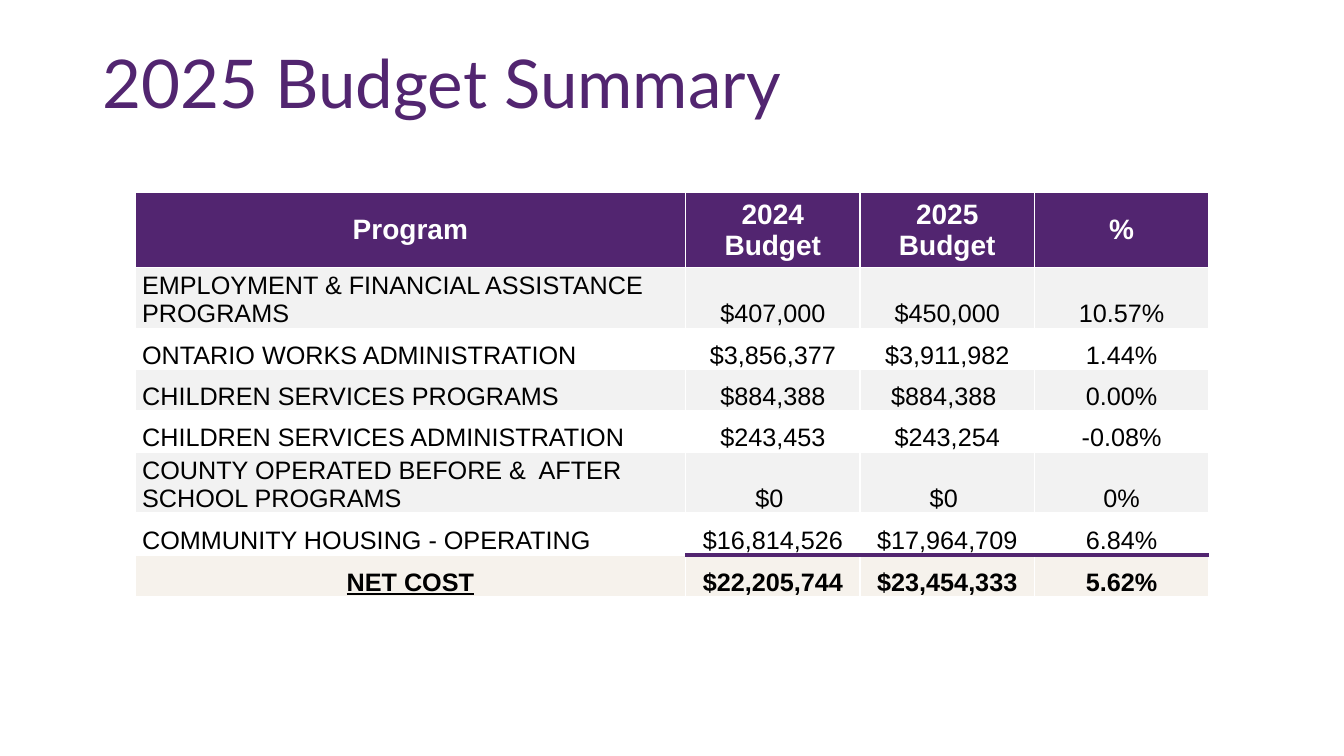
from lxml.etree import SubElement
from pptx import Presentation
from pptx.dml.color import RGBColor
from pptx.enum.text import MSO_ANCHOR as Anchor, PP_ALIGN as Align
from pptx.oxml.ns import qn
from pptx.util import Pt

PX = 9144
PURPLE = RGBColor(0x52, 0x25, 0x70)
WHITE = RGBColor(0xFF, 0xFF, 0xFF)
BLACK = RGBColor(0x00, 0x00, 0x00)
GREY = RGBColor(0xF2, 0xF2, 0xF2)
CREAM = RGBColor(0xF6, 0xF2, 0xEC)

HEADINGS = ("Program", "2024 Budget", "2025 Budget", "%")
PROGRAMS = (
    ("EMPLOYMENT & FINANCIAL ASSISTANCE PROGRAMS", "$407,000", "$450,000", "10.57%"),
    ("ONTARIO WORKS ADMINISTRATION ", "$3,856,377", "$3,911,982", "1.44%"),
    ("CHILDREN SERVICES PROGRAMS", "$884,388", "$884,388 ", "0.00%"),
    ("CHILDREN SERVICES ADMINISTRATION", "$243,453", "$243,254", "-0.08%"),
    ("COUNTY OPERATED BEFORE &  AFTER SCHOOL PROGRAMS", "$0 ", "$0 ", "0%"),
    ("COMMUNITY HOUSING - OPERATING", "$16,814,526", "$17,964,709", "6.84%"),
)
NET_COST = ("NET COST", "$22,205,744", "$23,454,333", "5.62%")
COLUMN_WIDTHS = (546, 173, 173, 173)
ROW_HEIGHTS = (41, 41, 41, 41, 41, 41, 42, 41)


def px(length):
    return length * PX


def add_span(para, text, font_name, size, color, bold=False, underline=False):
    span = para.add_run()
    span.text = text
    font = span.font
    font.name, font.size, font.color.rgb = font_name, Pt(size), color
    font.bold, font.underline = bold, underline


def add_title(page, text):
    box = page.shapes.add_textbox(px(92), px(40), px(1150), px(93))
    frame = box.text_frame
    frame.word_wrap = True
    frame.vertical_anchor = Anchor.MIDDLE
    para = frame.paragraphs[0]
    para.line_spacing = 0.9
    add_span(para, text, "Lato", 48, PURPLE)


def add_border(cell, side, color, points):
    line = SubElement(cell._tc.get_or_add_tcPr(), qn(f"a:ln{side}"), w=str(Pt(points)))
    fill = SubElement(line, qn("a:solidFill"))
    SubElement(fill, qn("a:srgbClr"), val=str(color))


def style_cell(cell, fill, rule_side):
    for side in "LR":
        add_border(cell, side, WHITE, 1)
    if rule_side:
        add_border(cell, rule_side, PURPLE, 3)
    cell.fill.solid()
    cell.fill.fore_color.rgb = fill


def write_cell(cell, text, centred, header, total, underline):
    cell.vertical_anchor = Anchor.MIDDLE if header else Anchor.BOTTOM
    cell.margin_left = cell.margin_right = px(10 if header else 7)
    cell.margin_top = cell.margin_bottom = px(4 if header else 0)
    para = cell.text_frame.paragraphs[0]
    para.alignment = Align.CENTER if centred else Align.LEFT
    size, color = (20, WHITE) if header else (18, BLACK)
    add_span(para, text, "Arial", size, color, header or total, underline)


def row_fill(row, last):
    if row == 0:
        return PURPLE
    if row == last:
        return CREAM
    return GREY if row % 2 else WHITE


def add_budget_table(page):
    rows = (HEADINGS, *PROGRAMS, NET_COST)
    last = len(rows) - 1
    rule_sides = {last - 1: "B", last: "T"}
    frame = page.shapes.add_table(
        len(rows), len(HEADINGS), px(134), px(191),
        px(sum(COLUMN_WIDTHS)), px(sum(ROW_HEIGHTS)))
    table = frame.table
    for column, width in zip(table.columns, COLUMN_WIDTHS):
        column.width = px(width)
    for row, values in enumerate(rows):
        table.rows[row].height = px(ROW_HEIGHTS[row])
        header, total = row == 0, row == last
        for column, text in enumerate(values):
            cell = table.cell(row, column)
            rule_side = rule_sides.get(row) if column else None
            style_cell(cell, row_fill(row, last), rule_side)
            write_cell(cell, text, header or total or column > 0,
                       header, total, total and column == 0)


def main():
    deck = Presentation()
    deck.slide_width, deck.slide_height = px(1333), px(750)
    page = deck.slides.add_slide(deck.slide_layouts[6])
    add_title(page, "2025 Budget Summary")
    add_budget_table(page)
    deck.save("out.pptx")


if __name__ == "__main__":
    main()
